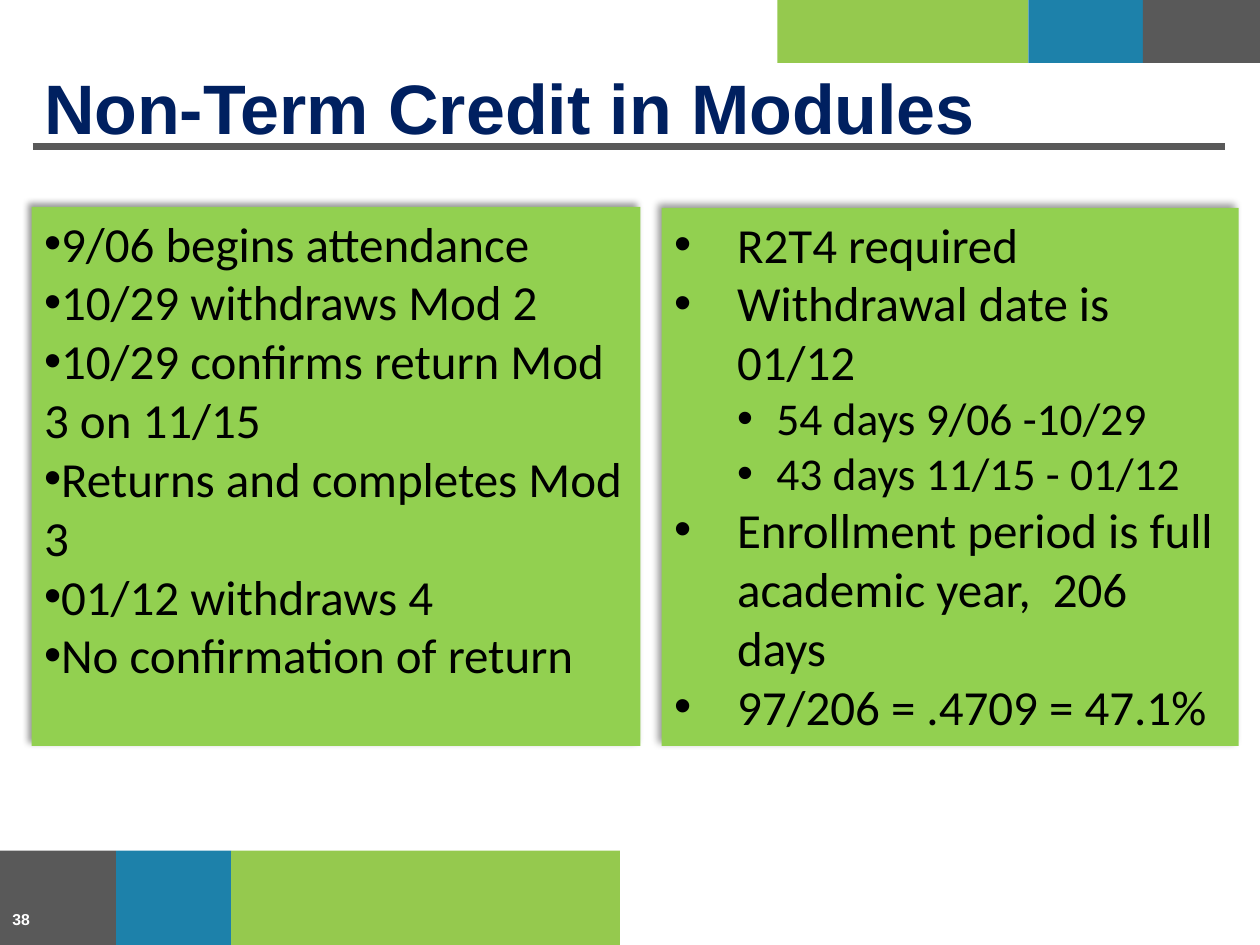
from lxml.etree import SubElement
from pptx import Presentation
from pptx.dml.color import RGBColor
from pptx.enum.shapes import MSO_CONNECTOR as CONN, MSO_SHAPE as SHAPE
from pptx.enum.text import MSO_ANCHOR as ANCHOR, PP_ALIGN as ALIGN
from pptx.oxml.ns import qn
from pptx.util import Cm, Pt

GREEN = RGBColor(0x95, 0xC9, 0x4E)
BLUE = RGBColor(0x1D, 0x81, 0xAA)
GRAY = RGBColor(0x59, 0x59, 0x59)
PANEL = RGBColor(0x92, 0xD0, 0x50)
NAVY = RGBColor(0x00, 0x20, 0x60)
BLACK = RGBColor(0, 0, 0)
WHITE = RGBColor(0xFF, 0xFF, 0xFF)

HANGING = [(1.27, 1.27, 28), (2.06, 0.79, 26)]
FLUSH = [(0, 0, 28)]
TIMELINE = [
    (0, "9/06 begins attendance"),
    (0, "10/29 withdraws Mod 2"),
    (0, "10/29 confirms return Mod 3 on 11/15"),
    (0, "Returns and completes Mod 3"),
    (0, "01/12 withdraws 4"),
    (0, "No confirmation of return"),
]
CALCULATION = [
    (0, "R2T4 required"),
    (0, "Withdrawal date is 01/12"),
    (1, "54 days 9/06 -10/29"),
    (1, "43 days 11/15 - 01/12"),
    (0, "Enrollment period is full academic year,  206 days"),
    (0, "97/206 = .4709 = 47.1%"),
]


class SlideBuilder:
    """Draws styled elements on the current slide."""

    title = dict(name="Arial", size=Pt(40), bold=True)
    number = dict(name="Arial", size=Pt(9), bold=True)
    body = dict(name="Calibri", bold=False)

    def __init__(self, prs):
        self.s = prs.slides.add_slide(prs.slide_layouts[6])

    def format(self, font, style, color):
        for key, value in style.items():
            setattr(font, key, value)
        font.color.rgb = color

    def rect(self, x, y, w, h, color):
        sp = self.s.shapes.add_shape(SHAPE.RECTANGLE, Cm(x), Cm(y), Cm(w), Cm(h))
        sp.shadow.inherit = False
        sp.fill.solid()
        sp.fill.fore_color.rgb = color
        sp.line.fill.background()
        return sp

    def band(self, x, y, h, parts):
        for w, color in parts:
            self.rect(x, y, w, h, color)
            x += w

    def rule(self, x1, x2, y):
        ln = self.s.shapes.add_connector(CONN.STRAIGHT, Cm(x1), Cm(y), Cm(x2), Cm(y))
        ln.line.color.rgb = GRAY
        ln.line.width = Pt(4)
        SubElement(ln._element.spPr, qn("a:effectLst"))

    def text(self, x, y, w, h, words, style, color, anchor):
        tf = self.s.shapes.add_textbox(Cm(x), Cm(y), Cm(w), Cm(h)).text_frame
        tf.word_wrap = True
        tf.vertical_anchor = anchor
        tf.margin_top = tf.margin_bottom = 0
        r = tf.paragraphs[0].add_run()
        r.text = words
        self.format(r.font, style, color)

    def shadow(self, sp):
        effects = sp._element.spPr.find(qn("a:effectLst"))
        outer = SubElement(effects, qn("a:outerShdw"), blurRad=str(Pt(4)),
                           dist=str(Pt(3)), dir=str(225 * 60000),
                           algn="br", rotWithShape="0")
        clr = SubElement(outer, qn("a:srgbClr"), val=str(BLACK))
        SubElement(clr, qn("a:alpha"), val="40000")

    def panel(self, x, y, w, h, items, levels):
        sp = self.rect(x, y, w, h, PANEL)
        self.shadow(sp)
        tf = sp.text_frame
        tf.word_wrap = True
        tf.vertical_anchor = ANCHOR.TOP
        for i, (level, words) in enumerate(items):
            margin, hang, size = levels[level]
            p = tf.add_paragraph() if i else tf.paragraphs[0]
            p.level = level
            p.alignment = ALIGN.LEFT
            pPr = p._p.get_or_add_pPr()
            pPr.set("marL", str(Cm(margin)))
            pPr.set("indent", str(Cm(-hang)))
            SubElement(pPr, qn("a:buFont"), typeface="Arial")
            SubElement(pPr, qn("a:buChar"), char="•")
            r = p.add_run()
            r.text = words
            self.format(r.font, dict(self.body, size=Pt(size)), BLACK)


def main():
    prs = Presentation()
    prs.slide_width, prs.slide_height = Cm(25.4), Cm(19.05)
    b = SlideBuilder(prs)
    b.band(0, 17.15, 1.9, [(2.34, GRAY), (2.32, BLUE), (7.84, GREEN)])
    b.band(15.67, 0, 1.27, [(5.06, GREEN), (2.31, BLUE), (2.36, GRAY)])
    b.rule(0.66, 24.69, 2.95)
    b.text(0.64, 1.19, 23.75, 1.8, "Non-Term Credit in Modules",
           b.title, NAVY, ANCHOR.BOTTOM)
    b.text(0, 18.03, 5.92, 1.02, "38", b.number, WHITE, ANCHOR.MIDDLE)
    b.panel(0.64, 4.17, 12.27, 10.87, TIMELINE, FLUSH)
    b.panel(13.34, 4.19, 11.63, 10.85, CALCULATION, HANGING)
    prs.save("out.pptx")


if __name__ == "__main__":
    main()
